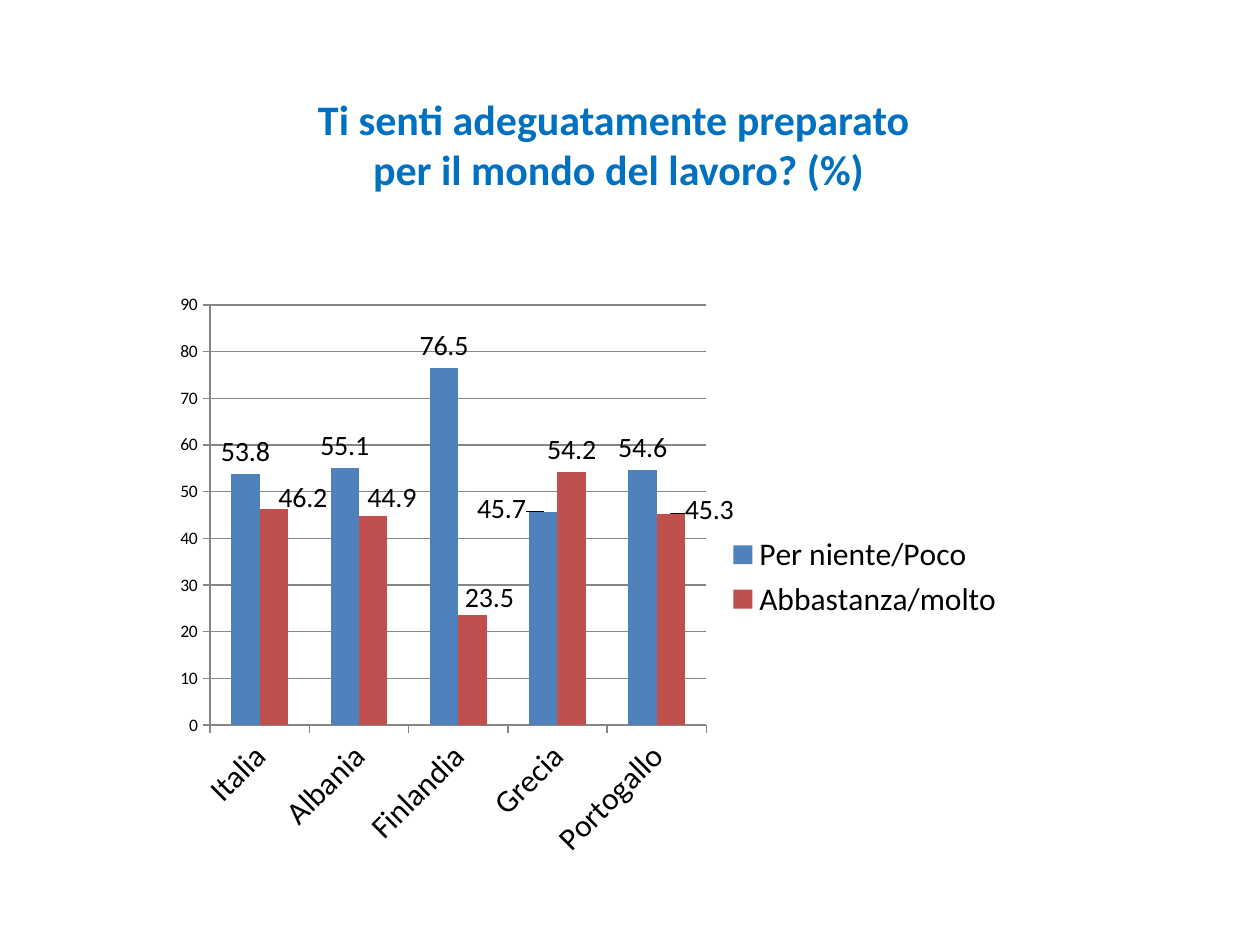
from dataclasses import dataclass

from lxml import etree
from pptx import Presentation, util as u
from pptx.chart.data import CategoryChartData
from pptx.dml.color import RGBColor
from pptx.enum import chart as ch, text
from pptx.oxml.ns import qn

PX = u.Inches(1) // 126


@dataclass(frozen=True)
class Theme:
    font: str = "Calibri"
    title: str = "0070C0"
    ink: str = "000000"
    rule: str = "868686"
    bars: tuple = ("4F81BD", "C0504D")
    title_size: int = 24
    axis_size: int = 10
    label_size: int = 16
    name_size: int = 18


THEME = Theme()

COUNTRIES = ["Italia", "Albania", "Finlandia", "Grecia", "Portogallo"]
ANSWERS = {
    "Per niente/Poco": [53.8, 55.1, 76.5, 45.7, 54.6],
    "Abbastanza/molto": [46.2, 44.9, 23.5, 54.2, 45.3],
}
# Label shifts in px, by answer and country index
LABEL_SHIFTS = {
    "Per niente/Poco": {3: (-42, 20)},
    "Abbastanza/molto": {0: (29, 11), 1: (19, 5), 2: (17, 5), 4: (38, 18)},
}


def emu(box):
    return [length * PX for length in box]


def format_font(font, size, color=THEME.ink, bold=False):
    font.name = THEME.font
    font.size = u.Pt(size)
    font.bold = bold
    font.color.rgb = RGBColor.from_string(color)


def write_text(frame, lines, size, color, bold=False):
    for index, line in enumerate(lines):
        paragraph = frame.paragraphs[0] if index == 0 else frame.add_paragraph()
        paragraph.alignment = text.PP_ALIGN.CENTER
        run = paragraph.add_run()
        run.text = line
        format_font(run.font, size, color, bold)


def manual_layout(x, y, w=None, h=None):
    """Return a c:layout; with w and h it fixes the inner plot area."""
    layout = etree.Element(qn("c:layout"))
    manual = etree.SubElement(layout, qn("c:manualLayout"))
    values = [("x", x), ("y", y)]
    if w is not None:
        values = [("layoutTarget", "inner"), ("xMode", "edge"), ("yMode", "edge"),
                  *values, ("w", w), ("h", h)]
    for tag, value in values:
        etree.SubElement(manual, qn(f"c:{tag}")).set("val", str(value))
    return layout


def add_title(slide, box):
    title = slide.shapes.title
    title.left, title.top, title.width, title.height = emu(box)
    frame = title.text_frame
    write_text(frame, ["Ti senti adeguatamente preparato ", "per il mondo del lavoro? (%)"],
               size=THEME.title_size, color=THEME.title, bold=True)
    frame.vertical_anchor = text.MSO_ANCHOR.MIDDLE
    frame.word_wrap = False
    frame.auto_size = text.MSO_AUTO_SIZE.SHAPE_TO_FIT_TEXT


def format_axes(chart):
    for axis in (chart.category_axis, chart.value_axis):
        axis.format.line.color.rgb = RGBColor.from_string(THEME.rule)
        axis.major_tick_mark = ch.XL_TICK_MARK.OUTSIDE
        axis.minor_tick_mark = ch.XL_TICK_MARK.NONE
    countries, percent = chart.category_axis, chart.value_axis
    format_font(countries.tick_labels.font, THEME.name_size)
    countries._element.find(f".//{qn('a:bodyPr')}").set("rot", "-2700000")
    format_font(percent.tick_labels.font, THEME.axis_size)
    percent.minimum_scale, percent.maximum_scale, percent.major_unit = 0, 90, 10
    percent.has_major_gridlines = True
    percent.major_gridlines.format.line.color.rgb = RGBColor.from_string(THEME.rule)


def format_answer(series, color, chart_width, chart_height):
    series.format.fill.solid()
    series.format.fill.fore_color.rgb = RGBColor.from_string(color)
    labels = series.data_labels
    labels.show_value = True
    labels.position = ch.XL_LABEL_POSITION.OUTSIDE_END
    format_font(labels.font, THEME.label_size)
    for index, (dx, dy) in LABEL_SHIFTS[series.name].items():
        label = series.points[index].data_label
        label.position = ch.XL_LABEL_POSITION.OUTSIDE_END
        format_font(label.font, THEME.label_size)
        number = series._element.find(f".//{qn('c:dLbl')}/{qn('c:idx')}[@val='{index}']")
        number.addnext(manual_layout(round(dx / chart_width, 3), round(dy / chart_height, 3)))


def add_answers_chart(slide, box):
    data = CategoryChartData()
    data.categories = COUNTRIES
    for answer, values in ANSWERS.items():
        data.add_series(answer, values)
    chart = slide.shapes.add_chart(ch.XL_CHART_TYPE.COLUMN_CLUSTERED, *emu(box), data).chart
    chart.has_title = False
    format_font(chart.font, THEME.axis_size)
    format_axes(chart)

    plot = chart.plots[0]
    plot.gap_width, plot.overlap, plot.vary_by_categories = 150, 0, False
    for series, color in zip(plot.series, THEME.bars):
        format_answer(series, color, *box[2:])

    chart.has_legend = True
    chart.legend.position = ch.XL_LEGEND_POSITION.RIGHT
    chart.legend.include_in_layout = False
    format_font(chart.legend.font, THEME.name_size)

    area = chart._chartSpace.find(f".//{qn('c:plotArea')}")
    for layout in area.findall(qn("c:layout")):
        area.remove(layout)
    area.insert(0, manual_layout(0.054, 0.036, 0.582, 0.717))


def main():
    deck = Presentation()
    deck.slide_width, deck.slide_height = u.Inches(10), u.Inches(7.5)
    slide = deck.slides.add_slide(deck.slide_layouts[5])
    add_answers_chart(slide, (164, 284, 853, 586))
    add_title(slide, (302, 86, 633, 115))
    deck.save("out.pptx")


if __name__ == "__main__":
    main()
